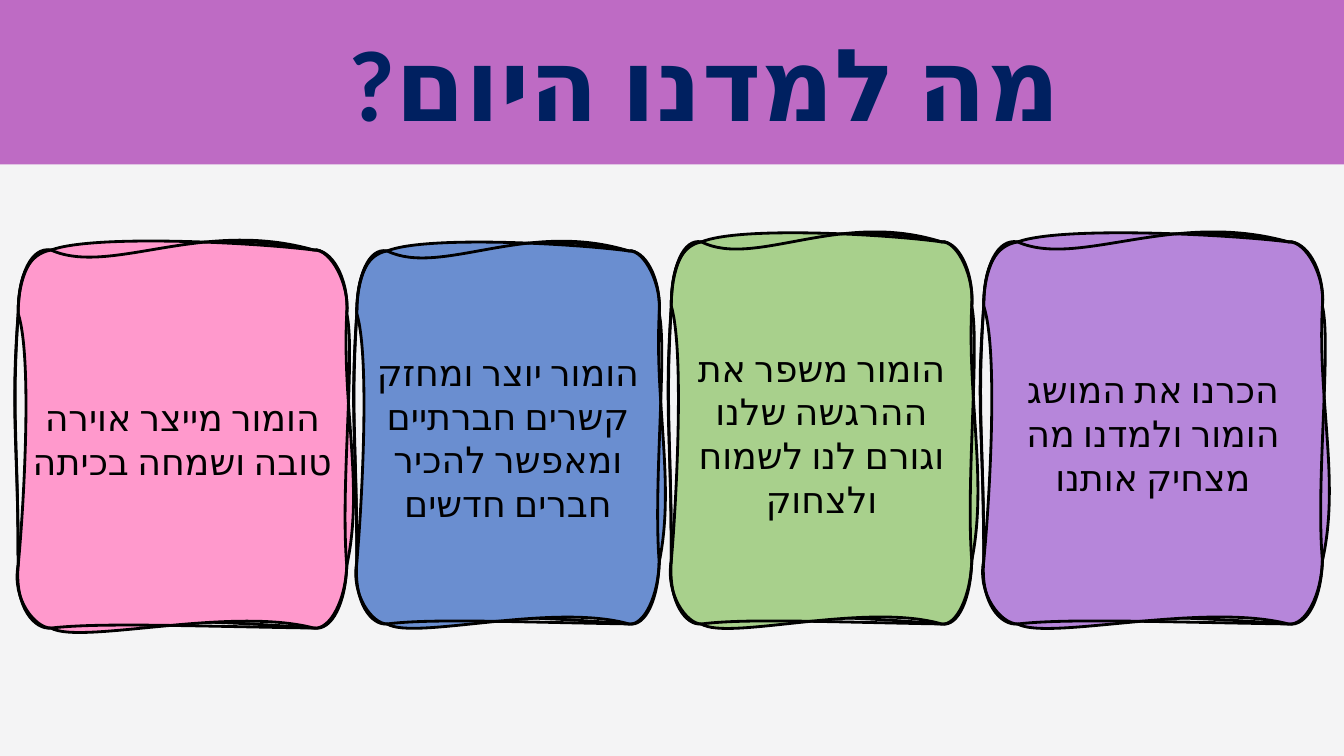
from lxml import etree
from pptx import Presentation
from pptx.dml.color import RGBColor
from pptx.enum.shapes import MSO_SHAPE
from pptx.enum.text import MSO_ANCHOR, PP_ALIGN
from pptx.oxml.ns import qn
from pptx.util import Pt

# Colours
PAPER = RGBColor(0xF4, 0xF4, 0xF5)
ORCHID = RGBColor(0xBE, 0x6B, 0xC4)
NAVY = RGBColor(0x00, 0x20, 0x60)
BLACK = RGBColor(0x00, 0x00, 0x00)
PURPLE = RGBColor(0xB6, 0x86, 0xDA)
GREEN = RGBColor(0xA8, 0xD0, 0x8C)
BLUE = RGBColor(0x6A, 0x8E, 0xD0)
PINK = RGBColor(0xFF, 0x99, 0xCC)

# Content
TITLE = "מה למדנו היום?"
TITLE_BOX = (206.6, 18, 593.3, 80.6)
BANNER_BOX = (0, 0, 960, 117.4)
CARDS = [  # text, fill, (left, top, width, height)
    ("הכרנו את המושג הומור ולמדנו מה מצחיק אותנו", PURPLE, (702.7, 172.8, 241.9, 272.9)),
    ("הומור משפר את ההרגשה שלנו וגורם לנו לשמוח ולצחוק", GREEN, (479.5, 172.8, 214.6, 272.9)),
    ("הומור יוצר ומחזק קשרים חברתיים ומאפשר להכיר חברים חדשים", BLUE, (254.9, 179.3, 216, 266.4)),
    ("הומור מייצר אוירה טובה ושמחה בכיתה", PINK, (13, 178.6, 234.7, 270)),
]
TITLE_FONT = {"name": "Calibri", "size": Pt(72), "bold": True}
CARD_FONT = {"name": "Calibri", "size": Pt(26), "bold": False}
FRAME_FORMAT = {
    "word_wrap": True, "vertical_anchor": MSO_ANCHOR.MIDDLE,
    "margin_left": Pt(7.2), "margin_right": Pt(7.2),
    "margin_top": Pt(3.6), "margin_bottom": Pt(3.6),
}

# Hand-drawn card outline, in per cent of the card's width and height
CORNERS = [(0, 16.8), (10, 0), (90, 0), (100, 16.8),
           (100, 83.4), (90, 100), (10, 100), (0, 83.4)]
STROKES = [  # fill mode, two control points on the way to each next corner
    ("none", [(0, 6.6, 4, -1), (27, 5, 52, -7), (94.5, -1, 100.5, 10.3),
              (98, 31.5, 102.5, 63.3), (98.7, 91.8, 95, 99.7),
              (52, 97.5, 23, 97.6), (3.4, 99, -1.2, 91.5), (0, 50.6, -2.1, 44.6)]),
    ("norm", [(0, 6.3, 3.5, 1), (23, -4.2, 72, -2), (95, -0.4, 100.7, 7),
              (98.5, 41.4, 105.3, 62.7), (99.7, 93.2, 95.6, 100.8),
              (64.5, 94.2, 19, 104.5), (5, 100.5, -1.1, 94.5), (1.5, 70, 4.5, 29)]),
    ("none", [(0, 7, 4, -0.3), (28, 7, 56, -8.5), (95.3, -0.3, 101, 9.5),
              (102.7, 27, 98, 63), (99.7, 92.5, 95, 100.5),
              (52, 99.5, 25, 98.5), (5.2, 100, -2, 92.3), (0, 50.6, -2.4, 44)]),
]
UNITS = 10  # path units per per cent


def add_points(path, command, points):
    segment = etree.SubElement(path, qn(f"a:{command}"))
    for x, y in points:
        etree.SubElement(segment, qn("a:pt"), x=str(round(x * UNITS)), y=str(round(y * UNITS)))


def write(shape, text, font_format, colour):
    frame = shape.text_frame
    for key, value in FRAME_FORMAT.items():
        setattr(frame, key, value)
    paragraph = frame.paragraphs[0]
    paragraph.alignment = PP_ALIGN.CENTER
    paragraph._p.get_or_add_pPr().set("rtl", "1")
    run = paragraph.add_run()
    run.text = text
    for key, value in font_format.items():
        setattr(run.font, key, value)
    run.font.color.rgb = colour
    # Hebrew takes the complex-script font
    properties = run._r.get_or_add_rPr()
    properties.set("lang", "he-IL")
    etree.SubElement(properties, qn("a:cs"), typeface=font_format["name"])


def add_card(shapes, fill, box):
    left, top, width, height = box
    corners = [(Pt(left + width * x / 100), Pt(top + height * y / 100)) for x, y in CORNERS]
    builder = shapes.build_freeform(*corners[0])
    builder.add_line_segments(corners[1:], close=True)
    card = builder.convert_to_shape()
    card.shadow.inherit = False
    card.fill.solid()
    card.fill.fore_color.rgb = fill
    card.line.color.rgb = BLACK
    card.line.width = Pt(2)
    # Swap the straight outline for three curved strokes
    outline = card._element.spPr.find(".//" + qn("a:pathLst"))
    outline.remove(outline[0])
    side = str(100 * UNITS)
    for mode, controls in STROKES:
        stroke = etree.SubElement(outline, qn("a:path"), w=side, h=side, fill=mode)
        add_points(stroke, "moveTo", CORNERS[:1])
        for (x1, y1, x2, y2), corner in zip(controls, CORNERS[1:] + CORNERS[:1]):
            add_points(stroke, "cubicBezTo", [(x1, y1), (x2, y2), corner])
        etree.SubElement(stroke, qn("a:close"))
    return card


def main():
    deck = Presentation()
    deck.slide_width, deck.slide_height = Pt(960), Pt(540)
    slide = deck.slides.add_slide(deck.slide_layouts[6])
    slide.background.fill.solid()
    slide.background.fill.fore_color.rgb = PAPER

    # Banner and title
    banner = slide.shapes.add_shape(MSO_SHAPE.RECTANGLE, *map(Pt, BANNER_BOX))
    banner.shadow.inherit = False
    banner.fill.solid()
    banner.fill.fore_color.rgb = ORCHID
    banner.line.fill.background()
    title = slide.shapes.add_textbox(*map(Pt, TITLE_BOX))
    write(title, TITLE, TITLE_FONT, NAVY)

    # Cards
    for text, fill, box in CARDS:
        write(add_card(slide.shapes, fill, box), text, CARD_FONT, BLACK)

    deck.save("out.pptx")


if __name__ == "__main__":
    main()
